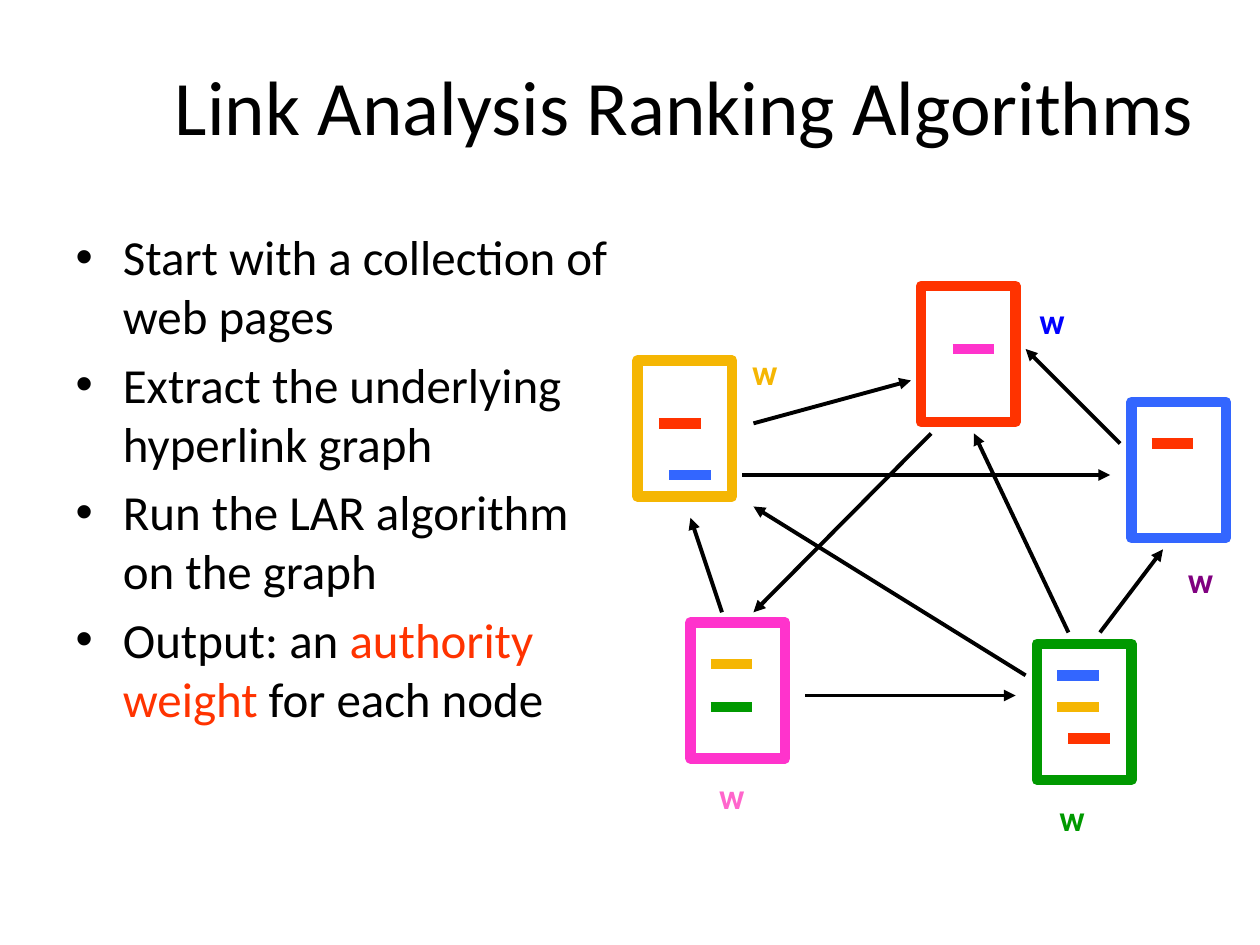
"""Build a slide on link analysis ranking with a graph of linked web pages."""
from lxml import etree
from pptx import Presentation
from pptx.dml.color import RGBColor
from pptx.enum import shapes, text
from pptx.oxml import ns
from pptx.util import Inches, Pt

BLACK = RGBColor(0x00, 0x00, 0x00)
WHITE = RGBColor(0xFF, 0xFF, 0xFF)
GOLD = RGBColor(0xF5, 0xB6, 0x03)
PINK = RGBColor(0xFF, 0x33, 0xCC)
GREEN = RGBColor(0x00, 0x99, 0x00)
BLUE = RGBColor(0x33, 0x66, 0xFF)
RED = RGBColor(0xFF, 0x33, 0x00)
LIGHT_PINK = RGBColor(0xFF, 0x66, 0xCC)
PURPLE = RGBColor(0x80, 0x00, 0x80)
PURE_BLUE = RGBColor(0x00, 0x00, 0xFF)

TITLE = "Link Analysis Ranking Algorithms"
BULLETS = [
    [("Start with a collection of web pages", BLACK)],
    [("Extract the underlying hyperlink graph", BLACK)],
    [("Run the LAR algorithm on the graph", BLACK)],
    [("Output: an ", BLACK), ("authority weight", RED), (" for each node", BLACK)],
]
PAGE_SIZE = (0.75, 1.08)
LINK_LENGTH = 0.33
PAGES = [
    {"at": (5.06, 2.86), "color": GOLD, "weight": (5.87, 2.73, GOLD),
     "links": [(5.31, 3.77, BLUE), (5.23, 3.36, RED)]},
    {"at": (5.48, 4.94), "color": PINK, "weight": (5.61, 6.1, LIGHT_PINK),
     "links": [(5.64, 5.61, GREEN), (5.64, 5.27, GOLD)]},
    {"at": (8.23, 5.11), "color": GREEN, "weight": (8.31, 6.27, GREEN),
     "links": [(8.39, 5.61, GOLD), (8.39, 5.36, BLUE), (8.48, 5.86, RED)]},
    {"at": (8.98, 3.19), "color": BLUE, "weight": (9.33, 4.38, PURPLE),
     "links": [(9.14, 3.52, RED)]},
    {"at": (7.31, 2.27), "color": RED, "weight": (8.15, 2.33, PURE_BLUE),
     "links": [(7.56, 2.77, PINK)]},
]
ARROWS = [
    ((6.39, 5.52), (8.06, 5.52)),
    ((7.39, 3.44), (5.98, 4.86)),
    ((5.73, 4.86), (5.48, 4.11)),
    ((5.98, 3.36), (7.23, 3.02)),
    ((5.89, 3.77), (8.81, 3.77)),
    ((8.89, 3.52), (8.14, 2.77)),
    ((8.48, 5.02), (7.73, 3.44)),
    ((8.73, 5.02), (9.23, 4.36)),
    ((8.14, 5.36), (5.98, 4.02)),
]


def add_text(paragraph, content, *, size, color, font="Calibri", bold=False):
    run = paragraph.add_run()
    run.text = content
    run.font.name = font
    run.font.size = Pt(size)
    run.font.bold = bold
    run.font.color.rgb = color


def place(shape, left, top, width, height):
    shape.left, shape.top = Inches(left), Inches(top)
    shape.width, shape.height = Inches(width), Inches(height)


def add_line(slide, start, end, color, width, arrow=False):
    points = [Inches(value) for value in (*start, *end)]
    line = slide.shapes.add_connector(shapes.MSO_CONNECTOR.STRAIGHT, *points)
    line.line.color.rgb = color
    line.line.width = Pt(width)
    if arrow:
        outline = line.line._get_or_add_ln()
        etree.SubElement(outline, ns.qn("a:tailEnd"), type="triangle")
    etree.SubElement(line._element.spPr, ns.qn("a:effectLst"))


def add_page(slide, page):
    lengths = [Inches(value) for value in page["at"] + PAGE_SIZE]
    shape = slide.shapes.add_shape(shapes.MSO_SHAPE.RECTANGLE, *lengths)
    shape.shadow.inherit = False
    shape.fill.solid()
    shape.fill.fore_color.rgb = WHITE
    shape.line.color.rgb = page["color"]
    shape.line.width = Pt(6)


def add_weight(slide, left, top, color):
    box = slide.shapes.add_textbox(Inches(left), Inches(top), Inches(0.45), Inches(0.43))
    box.text_frame.word_wrap = False
    box.text_frame.auto_size = text.MSO_AUTO_SIZE.SHAPE_TO_FIT_TEXT
    add_text(box.text_frame.paragraphs[0], "w", size=20, color=color, font="Cabin", bold=True)


def main():
    presentation = Presentation()
    presentation.slide_width, presentation.slide_height = Inches(10), Inches(7.5)
    slide = presentation.slides.add_slide(presentation.slide_layouts[1])

    title, body = slide.shapes.title, slide.placeholders[1]
    place(title, 1.22, 0.36, 8.43, 0.95)
    add_text(title.text_frame.paragraphs[0], TITLE, size=44, color=BLACK)

    place(body, 0.5, 1.75, 4.42, 4.95)
    frame = body.text_frame
    frame.auto_size = text.MSO_AUTO_SIZE.NONE
    for index, runs in enumerate(BULLETS):
        paragraph = frame.add_paragraph() if index else frame.paragraphs[0]
        for content, color in runs:
            add_text(paragraph, content, size=28, color=color)

    for page in PAGES:
        add_page(slide, page)
        for left, top, color in page["links"]:
            add_line(slide, (left, top), (left + LINK_LENGTH, top), color, 6)
    for start, end in ARROWS:
        add_line(slide, start, end, BLACK, 2.25, arrow=True)
    for page in PAGES:
        add_weight(slide, *page["weight"])

    presentation.save("out.pptx")


if __name__ == "__main__":
    main()
